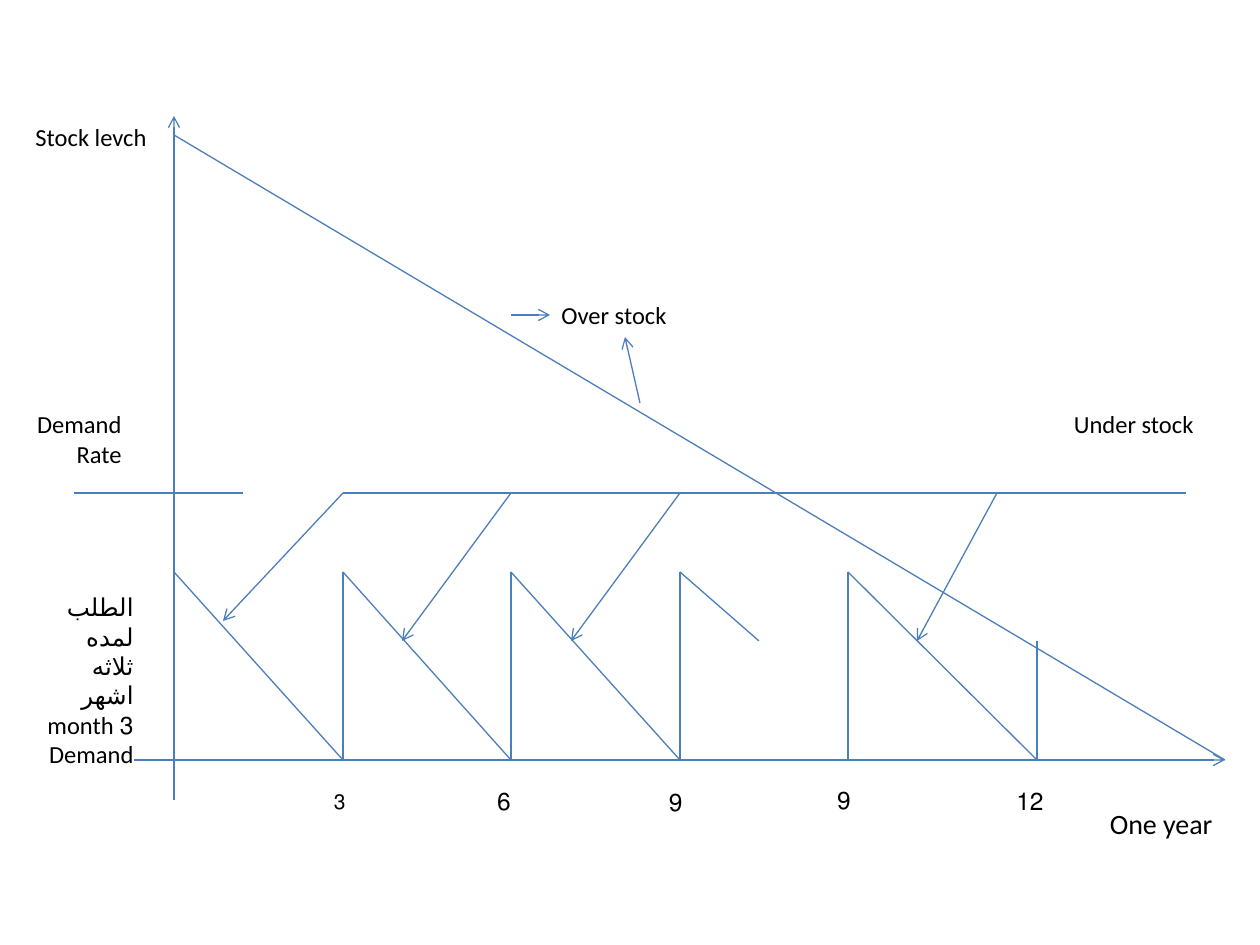
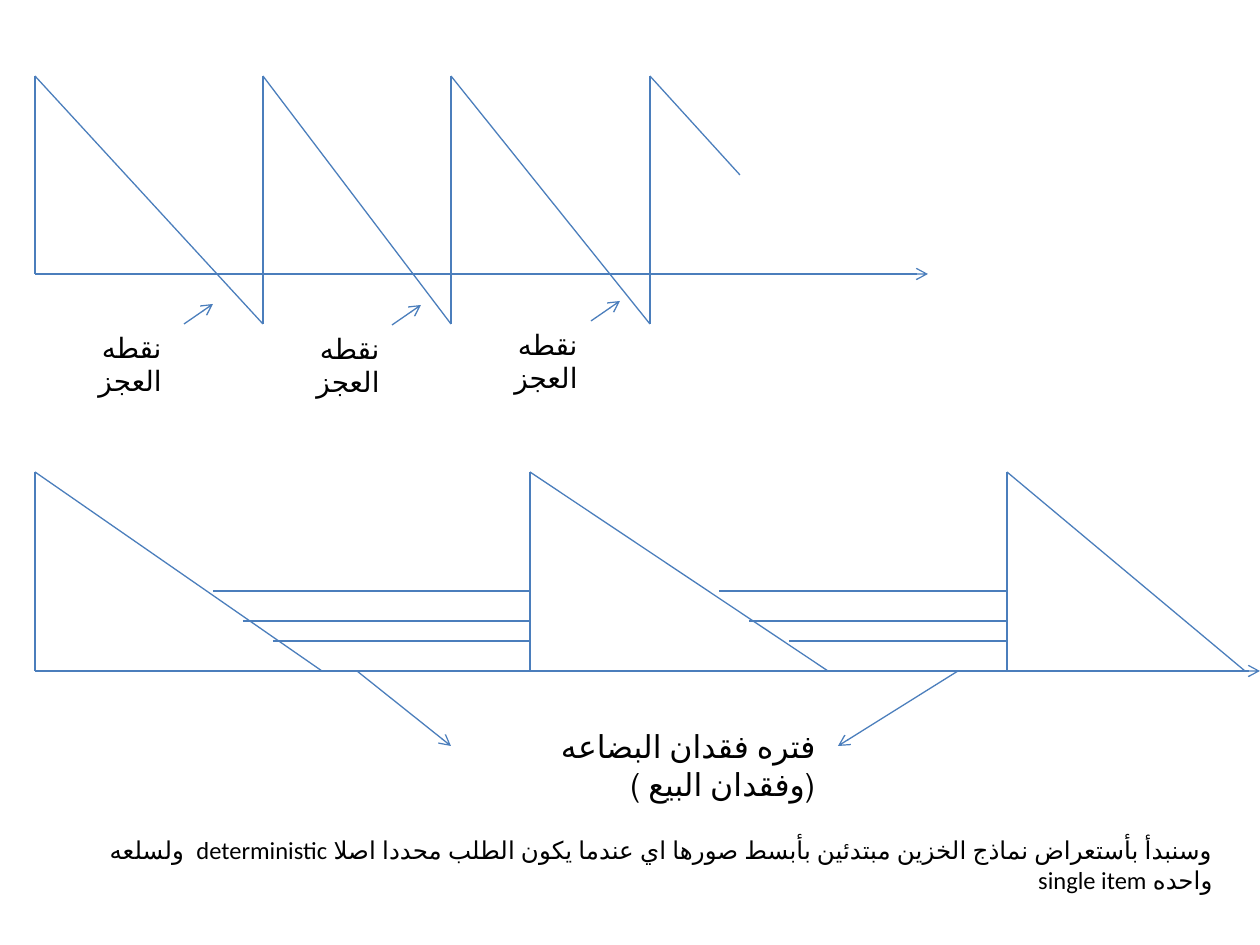
from lxml import etree
from pptx import Presentation
from pptx import util as u
from pptx.dml.color import RGBColor
from pptx.enum import lang, shapes, text
from pptx.oxml.ns import qn

PX = 7257  # EMU in one px, at 126 px to the inch
LINE_COLOUR = "4B7EBC"
TEXT_COLOUR = "000000"
FONT = "Calibri"


def add_line(slide, start, end, arrow=False):
    x1, y1, x2, y2 = (value * PX for value in (*start, *end))
    connector = slide.shapes.add_connector(shapes.MSO_CONNECTOR.STRAIGHT, x1, y1, x2, y2)
    connector.line.color.rgb = RGBColor.from_string(LINE_COLOUR)
    connector.line.width = u.Pt(0.75)
    properties = connector._element.spPr
    if arrow:
        etree.SubElement(properties.find(qn("a:ln")), qn("a:tailEnd"), type="arrow")
    etree.SubElement(properties, qn("a:effectLst"))


def add_label(slide, box, words, size=14):
    """Add right-to-left text; each line of words becomes a paragraph."""
    shape = slide.shapes.add_textbox(*(value * PX for value in box))
    frame = shape.text_frame
    frame.word_wrap = True
    frame.auto_size = text.MSO_AUTO_SIZE.SHAPE_TO_FIT_TEXT
    frame.text = words
    for paragraph in frame.paragraphs:
        paragraph.alignment = text.PP_ALIGN.RIGHT
        paragraph._p.get_or_add_pPr().set("rtl", "1")
        paragraph.font.name = FONT
        paragraph.font.size = u.Pt(size)
        paragraph.font.color.rgb = RGBColor.from_string(TEXT_COLOUR)
        for run in paragraph.runs:
            run.font.language_id = lang.MSO_LANGUAGE_ID.ARABIC_IRAQ


presentation = Presentation()
presentation.slide_width = u.Inches(10)
presentation.slide_height = u.Inches(7.5)
blank = presentation.slide_layouts[6]

# Slide 1: over stock and under stock during one year
slide = presentation.slides.add_slide(blank)
origin, year_end = 174, 1225
rate, peak, middle, base = 493, 572, 641, 760

add_line(slide, (origin, 800), (origin, 116), arrow=True)
add_line(slide, (134, base), (year_end, base), arrow=True)
add_line(slide, (origin, 135), (year_end, base))
add_line(slide, (74, rate), (243, rate))
add_line(slide, (343, rate), (1186, rate))

for start, end in ((origin, 343), (343, 511), (511, 680), (848, 1037)):
    add_line(slide, (start, peak), (end, base))
for order in (343, 511, 680, 848):
    add_line(slide, (order, base), (order, peak))
add_line(slide, (680, peak), (759, middle))
add_line(slide, (1037, base), (1037, middle))

for start, end in ((343, (223, 621)), (511, (402, middle)), (680, (571, middle)), (997, (917, middle))):
    add_line(slide, (start, rate), end, arrow=True)
add_line(slide, (511, 315), (550, 315), arrow=True)
add_line(slide, (640, 403), (625, 337), arrow=True)

for box, words, size in (
    ((15, 116, 144, 43), "Stock levch", 14),
    ((520, 294, 159, 43), "Over stock", 14),
    ((1037, 403, 169, 43), "Under stock", 14),
    ((1086, 800, 139, 47), "One year", 16),
    ((328, 782, 30, 38), "3", 12),
    ((493, 780, 30, 43), "6", 14),
    ((665, 781, 30, 43), "9", 14),
    ((833, 779, 30, 43), "9", 14),
    ((997, 780, 59, 43), "12", 14),
    ((15, 403, 119, 72), "Demand\nRate", 14),
    ((28, 586, 118, 161), "الطلب لمده ثلاثه اشهر\n3 month\nDemand", 14),
):
    add_label(slide, box, words, size)

# Slide 2: shortage points above, periods of lost sales below
slide = presentation.slides.add_slide(blank)
left = 35
peak, base, shortage = 76, 274, 324
orders = (left, 263, 451, 650)

add_line(slide, (left, base), (928, base), arrow=True)
add_line(slide, (left, base), (left, peak))
for start, end in zip(orders, orders[1:]):
    add_line(slide, (start, peak), (end, shortage))
    add_line(slide, (end, shortage), (end, peak))
add_line(slide, (orders[-1], peak), (740, 175))

for label_left, arrow_left, top in ((35, 184, 324), (253, 392, 325), (451, 591, 321)):
    add_line(slide, (arrow_left, top), (arrow_left + 29, top - 20), arrow=True)
    add_label(slide, (label_left, top, 139, 47), "نقطه العجز", 16)

peak, base = 472, 671
add_line(slide, (left, base), (1260, base), arrow=True)
for start, end in ((left, 322), (530, 828), (1007, 1245)):
    add_line(slide, (start, base), (start, peak))
    add_line(slide, (start, peak), (end, base))

for gap_end, gap_starts in ((530, (213, 243, 273)), (1007, (719, 749, 789))):
    for gap_start, level in zip(gap_starts, (591, 621, 641)):
        add_line(slide, (gap_start, level), (gap_end, level))

add_line(slide, (357, base), (451, 746), arrow=True)
add_line(slide, (958, base), (838, 746), arrow=True)
add_label(slide, (451, 721, 377, 50), "فتره فقدان البضاعه (وفقدان البيع )", 18)
add_label(
    slide,
    (64, 829, 1161, 43),
    "وسنبدأ بأستعراض نماذج الخزين مبتدئين بأبسط صورها اي عندما يكون الطلب محددا اصلا "
    "deterministic  ولسلعه واحده single item",
)

presentation.save("out.pptx")
